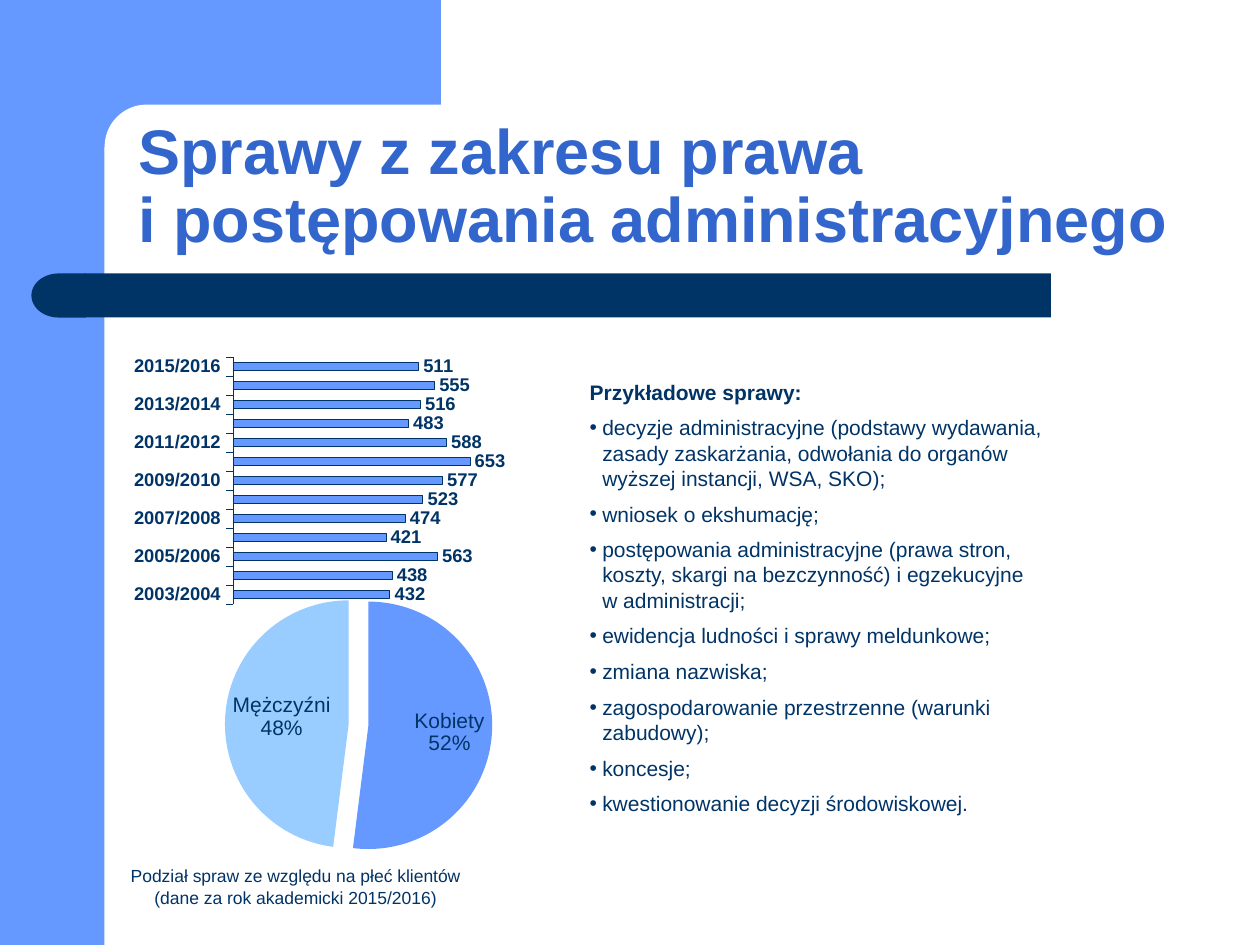
from lxml.etree import SubElement as add_element
from pptx import Presentation
from pptx.chart.data import CategoryChartData as ChartData
from pptx.dml.color import RGBColor
from pptx.enum.chart import XL_CHART_TYPE as ChartType, XL_LABEL_POSITION as LabelPosition
from pptx.enum.chart import XL_TICK_MARK as TickMark
from pptx.enum.shapes import MSO_SHAPE as Preset
from pptx.enum.text import MSO_ANCHOR as Anchor, MSO_AUTO_SIZE as AutoSize, PP_ALIGN as Align
from pptx.oxml import parse_xml
from pptx.oxml.ns import nsdecls, qn
from pptx.util import Inches, Pt

BLUE = RGBColor(0x66, 0x99, 0xFF)
LIGHT = RGBColor(0x99, 0xCC, 0xFF)
NAVY = RGBColor(0x00, 0x33, 0x66)
TITLE_BLUE = RGBColor(0x33, 0x66, 0xCC)
WHITE = RGBColor(0xFF, 0xFF, 0xFF)
FONT = "Arial"

TITLE = "Sprawy z zakresu prawa \ni postępowania administracyjnego"
HEADING = "Przykładowe sprawy:"
CASES = [
    "decyzje administracyjne (podstawy wydawania, zasady zaskarżania, "
    "odwołania do organów wyższej instancji, WSA, SKO);",
    "wniosek o ekshumację;",
    "postępowania administracyjne (prawa stron, koszty, skargi na bezczynność) "
    "i egzekucyjne \nw administracji;",
    "ewidencja ludności i sprawy meldunkowe;",
    "zmiana nazwiska;",
    "zagospodarowanie przestrzenne (warunki zabudowy);",
    "koncesje;",
    "kwestionowanie decyzji środowiskowej.",
]
CAPTION = "Podział spraw ze względu na płeć klientów (dane za rok akademicki 2015/2016)"
FIRST_YEAR = 2003
YEARLY_CASES = [432, 438, 563, 421, 474, 523, 577, 653, 588, 483, 516, 555, 511]
GENDERS = {"Kobiety": 52, "Mężczyźni": 48}


def style_font(font, size, color=NAVY, bold=False):
    """Apply the slide's typeface with a size, colour and weight."""
    font.name, font.size, font.bold = FONT, Pt(size), bold
    font.color.rgb = color


def fill_paragraph(para, text, size, color=NAVY, bold=False):
    """Set a paragraph's text and format its runs."""
    para.text = text
    for span in para.runs:
        style_font(span.font, size, color, bold)


def place(box, left, top, width, height):
    """Move and size a shape, in inches."""
    box.left, box.top = Inches(left), Inches(top)
    box.width, box.height = Inches(width), Inches(height)


def add_panel(page, preset, area, color, rounding=None):
    """Add a plain filled shape and return it."""
    panel = page.shapes.add_shape(preset, *map(Inches, area))
    panel.shadow.inherit = False
    panel.fill.solid()
    panel.fill.fore_color.rgb = color
    panel.line.fill.background()
    if rounding is not None:
        panel.adjustments[0] = rounding
    return panel


def add_backdrop(page):
    """Draw the blue frame, the rounded white corner and the navy bar."""
    add_panel(page, Preset.RECTANGLE, (0, 0, 0.83, 7.5), BLUE)
    add_panel(page, Preset.RECTANGLE, (0.75, 0, 2.75, 1.17), BLUE)
    add_panel(page, Preset.ROUNDED_RECTANGLE, (0.83, 0.83, 5.58, 0.67), WHITE, 0.5)
    add_panel(page, Preset.RECTANGLE, (0.67, 2.17, 7.67, 0.35), NAVY)
    cap = add_panel(page, Preset.FLOWCHART_DELAY, (0.25, 2.17, 0.43, 0.35), NAVY)
    cap._element.spPr.find(qn("a:xfrm")).set("flipH", "1")


def set_title(page):
    """Place and format the title placeholder."""
    title = page.shapes.title
    place(title, 1, 0.83, 8.75, 1.25)
    frame = title.text_frame
    frame.auto_size = AutoSize.NONE
    frame.vertical_anchor = Anchor.BOTTOM
    para = frame.paragraphs[0]
    fill_paragraph(para, TITLE, 36, TITLE_BLUE, True)
    para.alignment = Align.LEFT
    para.line_spacing = 0.9
    page.shapes._spTree.append(title._element)


def set_bullet(para, mark=None):
    """Give a paragraph a hanging bullet, or none."""
    properties = para._p.get_or_add_pPr()
    indent = Inches(0.1) if mark else 0
    properties.set("marL", str(indent))
    properties.set("indent", str(-indent))
    if mark:
        add_element(properties, qn("a:buChar"), char=mark)
    else:
        add_element(properties, qn("a:buNone"))


def set_case_list(page):
    """Place the body placeholder and fill it with the heading and cases."""
    body = page.placeholders[1]
    place(body, 4.58, 2.96, 4.04, 3.74)
    frame = body.text_frame
    frame.auto_size = AutoSize.NONE
    for index, text in enumerate([HEADING, *CASES]):
        para = frame.add_paragraph() if index else frame.paragraphs[0]
        fill_paragraph(para, text, 12, bold=index == 0)
        para.line_spacing = Pt(14.4)
        para.space_before = Pt(6)
        set_bullet(para, "•" if index else None)
    page.shapes._spTree.append(body._element)


def add_caption(page):
    """Add the centred caption under the pie."""
    box = page.shapes.add_textbox(*map(Inches, (0.83, 6.82, 3.03, 0.43)))
    box.text_frame.word_wrap = True
    para = box.text_frame.paragraphs[0]
    fill_paragraph(para, CAPTION, 10)
    para.alignment = Align.CENTER


def add_chart(page, kind, area, values, plot_area):
    """Add a one-series chart with a fixed inner plot area and return it."""
    data = ChartData()
    data.categories = list(values)
    data.add_series("Series 1", list(values.values()))
    chart = page.shapes.add_chart(kind, *map(Inches, area), data).chart
    chart.has_legend = chart.has_title = False
    style_font(chart.font, 12)
    plot = chart._chartSpace.chart.plotArea
    for old in plot.findall(qn("c:layout")):
        plot.remove(old)
    modes = '<c:layoutTarget val="inner"/><c:xMode val="edge"/><c:yMode val="edge"/>'
    sizes = "".join(f'<c:{key} val="{size}"/>' for key, size in zip("xywh", plot_area))
    plot.insert(0, parse_xml(
        f'<c:layout {nsdecls("c")}><c:manualLayout>{modes}{sizes}</c:manualLayout></c:layout>'))
    return chart


def add_year_chart(page):
    """Add the bar chart of cases per academic year."""
    values = {f"{year}/{year + 1}": count for year, count in enumerate(YEARLY_CASES, FIRST_YEAR)}
    chart = add_chart(page, ChartType.BAR_CLUSTERED, (0.88, 2.65, 3.47, 2.28), values,
                      (0.28, 0.08, 0.58, 0.86))
    scale, years = chart.value_axis, chart.category_axis
    scale.minimum_scale, scale.maximum_scale = 0, 700
    scale.has_major_gridlines = scale.visible = False
    years.major_tick_mark = TickMark.OUTSIDE
    years.format.line.color.rgb = NAVY
    years.format.line.width = Pt(0.15)
    style_font(years.tick_labels.font, 10.5, bold=True)
    plot = chart.plots[0]
    plot.gap_width, plot.vary_by_categories = 150, False
    bars = plot.series[0].format
    bars.fill.solid()
    bars.fill.fore_color.rgb = BLUE
    bars.line.color.rgb = NAVY
    bars.line.width = Pt(0.25)
    plot.has_data_labels = True
    labels = plot.data_labels
    labels.show_value = True
    labels.position = LabelPosition.OUTSIDE_END
    style_font(labels.font, 10.5, bold=True)


def add_gender_chart(page):
    """Add the exploded pie of clients by gender."""
    chart = add_chart(page, ChartType.PIE, (0.27, 4.54, 4.33, 2.4), GENDERS,
                      (0.35, 0.06, 0.49, 0.89))
    plot = chart.plots[0]
    series = plot.series[0]
    for index, color in enumerate((BLUE, LIGHT)):
        fill = series.points[index].format.fill
        fill.solid()
        fill.fore_color.rgb = color
    series._element.find(qn("c:dPt")).addprevious(
        parse_xml(f'<c:explosion {nsdecls("c")} val="8"/>'))
    plot.has_data_labels = True
    labels = plot.data_labels
    labels.show_value = False
    labels.show_category_name = labels.show_percentage = True
    labels.position = LabelPosition.INSIDE_END
    style_font(labels.font, 12)
    labels._element.find(qn("c:showBubbleSize")).addnext(
        parse_xml(f'<c:separator {nsdecls("c")}>\n</c:separator>'))


def main():
    """Build the slide and save it."""
    deck = Presentation()
    deck.slide_width, deck.slide_height = Inches(10), Inches(7.5)
    page = deck.slides.add_slide(deck.slide_layouts[1])
    add_backdrop(page)
    set_title(page)
    set_case_list(page)
    add_year_chart(page)
    add_caption(page)
    add_gender_chart(page)
    deck.save("out.pptx")


if __name__ == "__main__":
    main()
